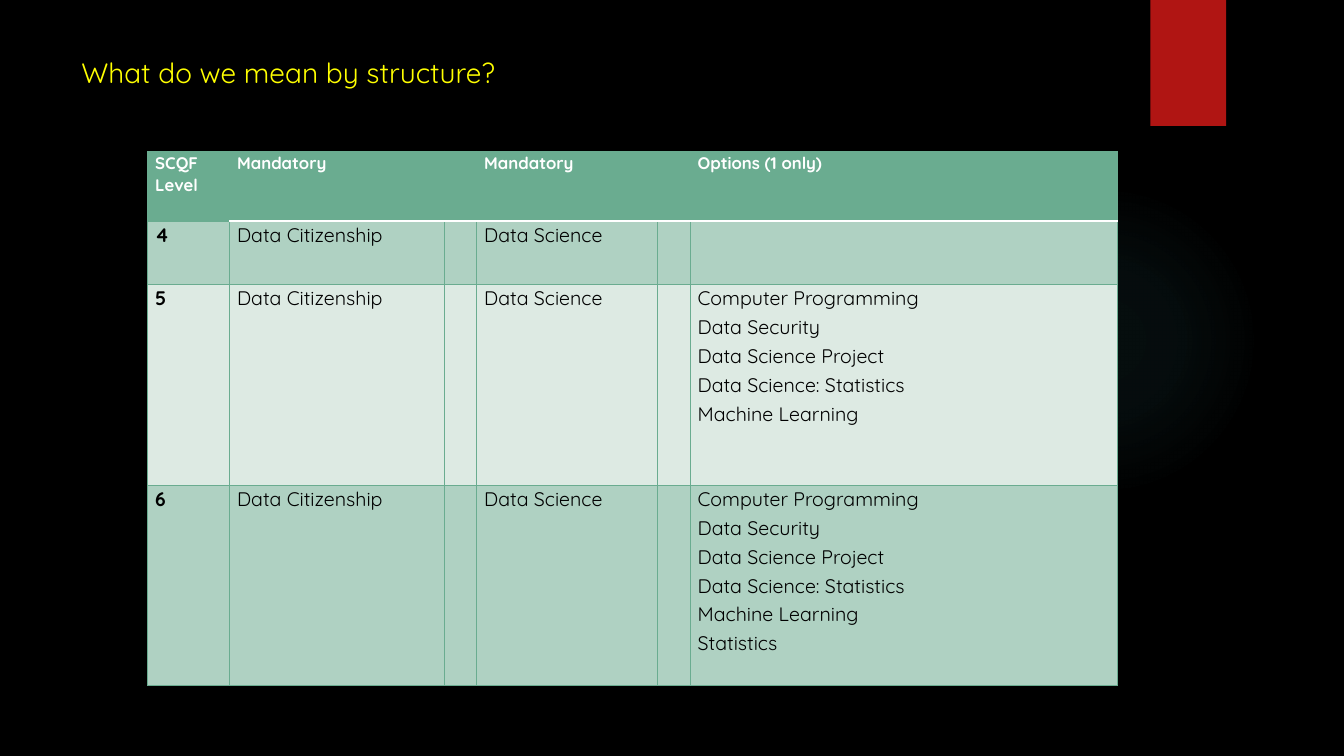
"""Build the slide on course structure: a title, a red tab and a table of units by level."""
from lxml.etree import SubElement
from pptx import Presentation
from pptx.dml.color import RGBColor
from pptx.enum.shapes import MSO_SHAPE
from pptx.oxml import parse_xml
from pptx.oxml.ns import nsdecls, qn
from pptx.util import Pt

BLACK = RGBColor(0x00, 0x00, 0x00)
WHITE = RGBColor(0xFF, 0xFF, 0xFF)
YELLOW = RGBColor(0xFF, 0xFF, 0x00)
RED = RGBColor(0xB0, 0x15, 0x13)
TEAL = RGBColor(0x50, 0xB9, 0xC1)
GREEN = RGBColor(0x6A, 0xAC, 0x90)
MID = RGBColor(0xAF, 0xD1, 0xC2)
PALE = RGBColor(0xDD, 0xEA, 0xE3)


def write(frame, text, size=14, color=BLACK, bold=False, spacing=1.07, after=1.9):
    frame.word_wrap = True
    frame.text = text
    for para in frame.paragraphs:
        para.line_spacing = spacing
        para.space_after = Pt(after)
        para.font.name = "Quicksand"
        para.font.size = Pt(size)
        para.font.bold = bold
        para.font.color.rgb = color


def border(cell, side, color, width):
    line = SubElement(cell._tc.get_or_add_tcPr(), qn(f"a:ln{side}"), w=str(Pt(width)))
    fill = SubElement(line, qn("a:solidFill"))
    SubElement(fill, qn("a:srgbClr"), val=str(color))


deck = Presentation()
deck.slide_width, deck.slide_height = Pt(960), Pt(540)
slide = deck.slides.add_slide(deck.slide_layouts[6])
slide.background.fill.solid()
slide.background.fill.fore_color.rgb = BLACK

glow = slide.shapes.add_shape(MSO_SHAPE.OVAL, Pt(677.5), Pt(132), Pt(222), Pt(222))
glow.shadow.inherit = False
glow.line.fill.background()
glow.fill.background()
stops = "".join(
    f'<a:gs pos="{pos * 1000}"><a:srgbClr val="{TEAL}"><a:alpha val="{alpha * 1000}"/></a:srgbClr></a:gs>'
    for pos, alpha in [(0, 7), (36, 6), (69, 0)]
)
blend = parse_xml(
    f'<a:gradFill {nsdecls("a")}><a:gsLst>{stops}</a:gsLst><a:path path="circle">'
    '<a:fillToRect l="50000" t="50000" r="50000" b="50000"/></a:path></a:gradFill>'
)
props = glow._element.spPr
props.replace(props.find(qn("a:noFill")), blend)

tab = slide.shapes.add_shape(MSO_SHAPE.RECTANGLE, Pt(821.75), Pt(0), Pt(54), Pt(90))
tab.shadow.inherit = False
tab.line.fill.background()
tab.fill.solid()
tab.fill.fore_color.rgb = RED

title = slide.shapes.add_textbox(Pt(51), Pt(36), Pt(741), Pt(48))
write(title.text_frame, "What do we mean by structure?", size=20, color=YELLOW, spacing=1, after=0)

units = ["Computer Programming", "Data Security", "Data Science Project",
         "Data Science: Statistics", "Machine Learning"]
core = ["Data Citizenship", "", "Data Science", ""]
rows = [
    ["SCQF Level", "Mandatory", "", "Mandatory", "", "Options (1 only)"],
    ["4", *core, ""],
    ["5", *core, "\n".join(units)],
    ["6", *core, "\n".join(units + ["Statistics"])],
]
widths = [58.5, 153.5, 23, 129, 23.5, 305.5]
heights = [50, 45, 143.5, 143.5]
fills = [GREEN, MID, PALE, MID]

frame = slide.shapes.add_table(4, 6, Pt(105.5), Pt(108), Pt(sum(widths)), Pt(sum(heights)))
table = frame.table
for col, width in zip(table.columns, widths):
    col.width = Pt(width)
for r, (row, height) in enumerate(zip(rows, heights)):
    table.rows[r].height = Pt(height)
    for c, text in enumerate(row):
        cell = table.cell(r, c)
        cell.margin_left = cell.margin_right = Pt(5.4)
        cell.margin_top = cell.margin_bottom = Pt(0)
        head = r == 0
        write(cell.text_frame, text, size=12 if head else 14,
              color=WHITE if head else BLACK, bold=head or c == 0)
        for side in "LRTB":
            rule = c > 0 and (r, side) in [(0, "B"), (1, "T")]
            border(cell, side, WHITE if rule else GREEN, 1.5 if rule else 0.75)
        cell.fill.solid()
        cell.fill.fore_color.rgb = fills[r]

deck.save("out.pptx")
